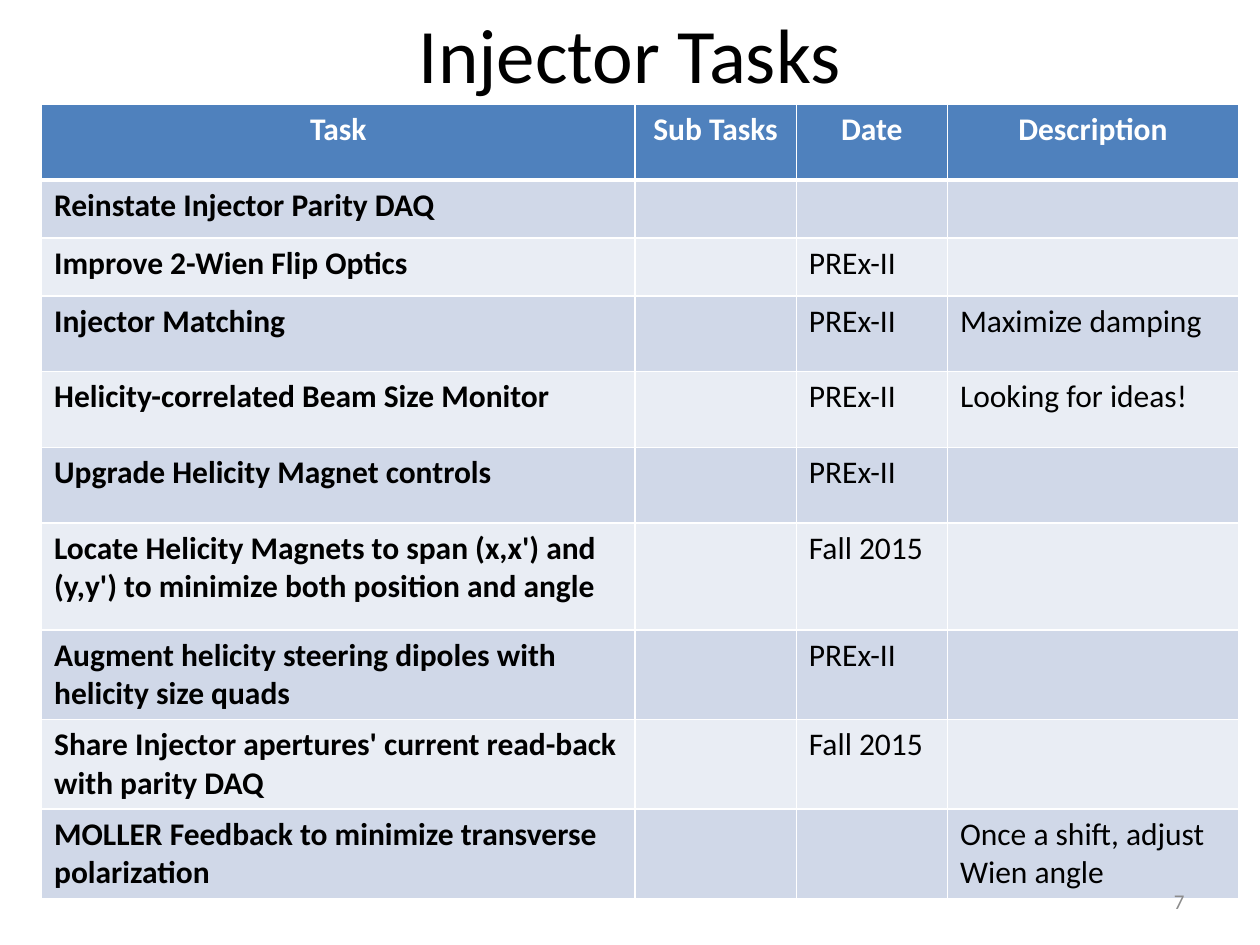
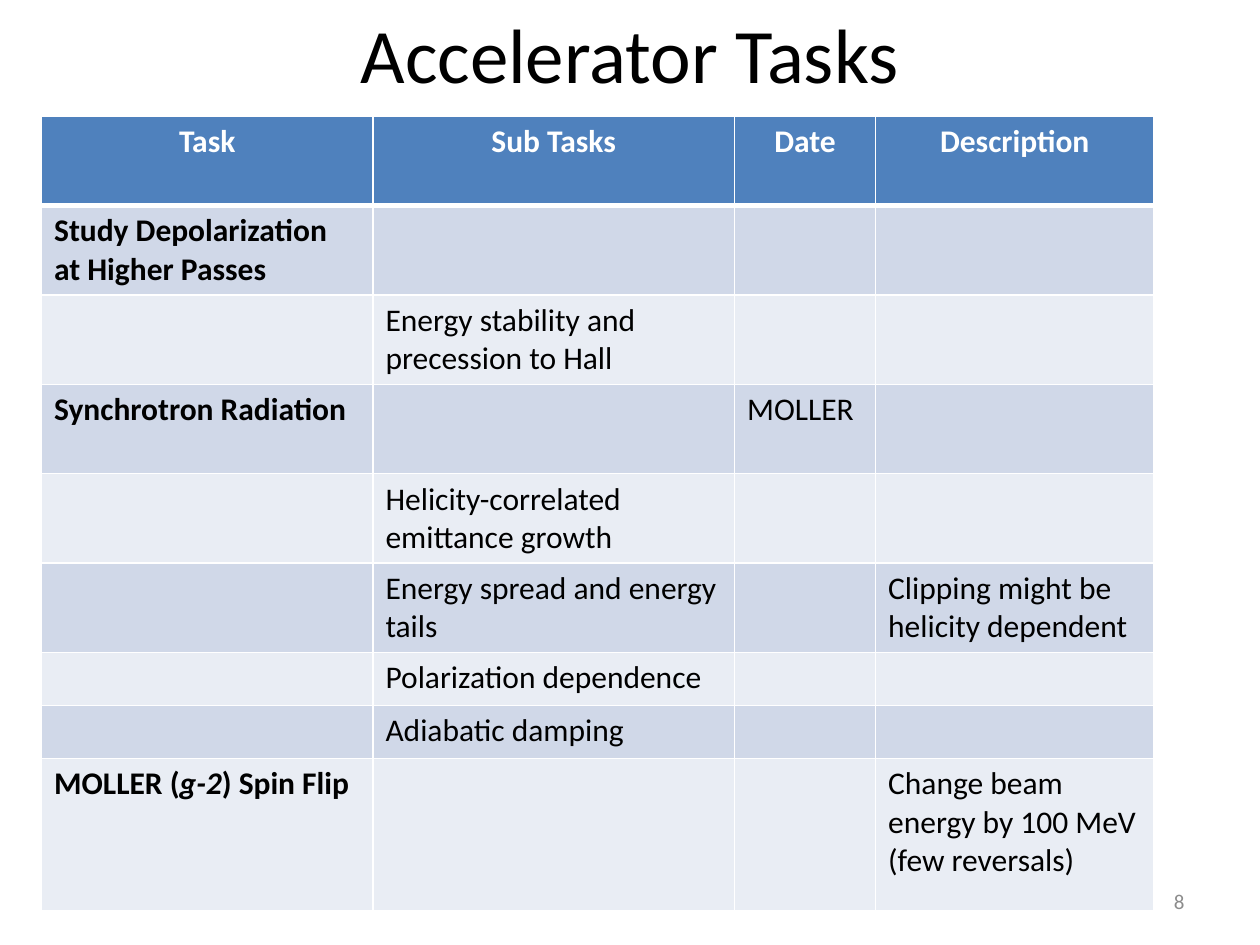
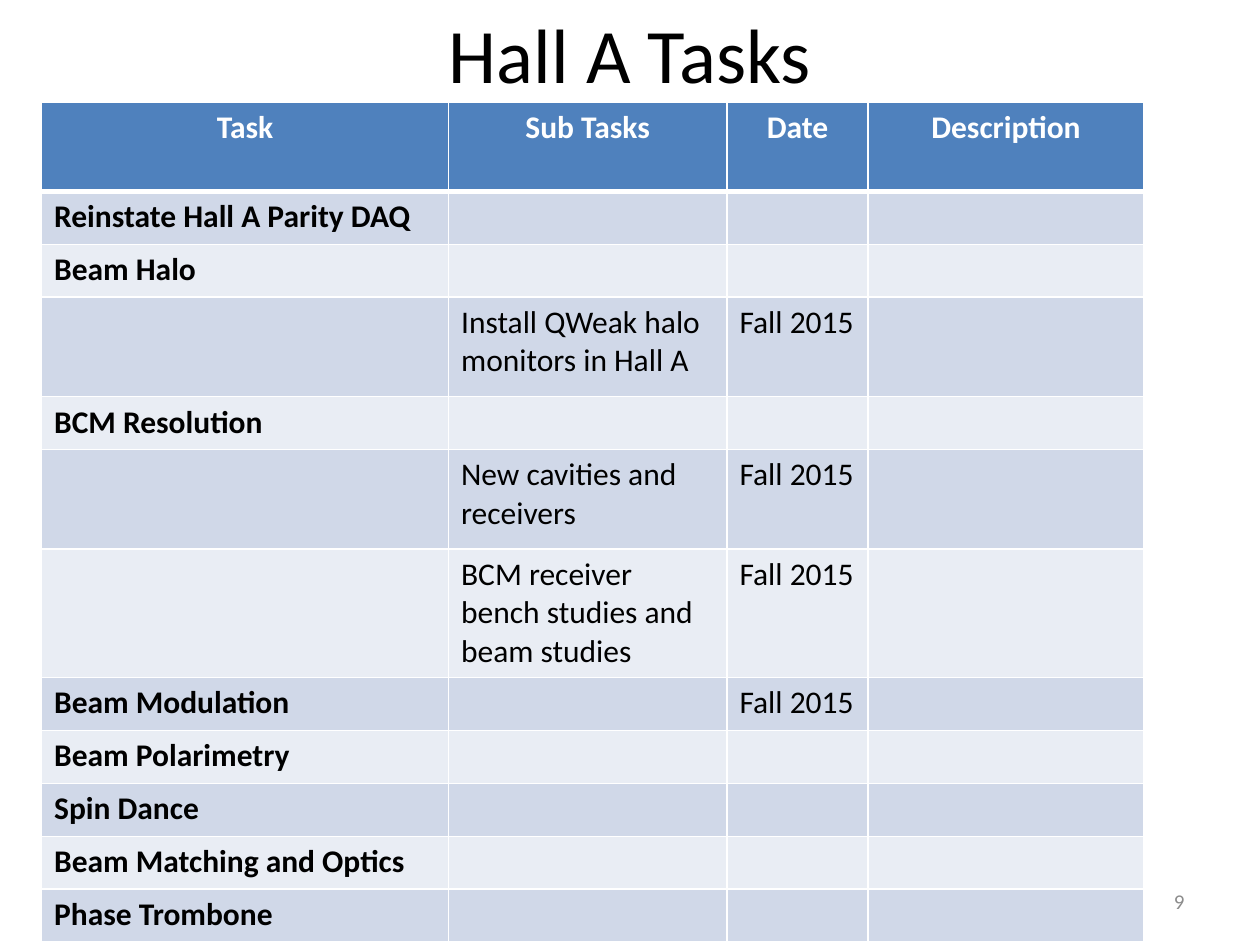
from lxml import etree
from pptx import Presentation
from pptx.dml.color import RGBColor
from pptx.enum.text import MSO_ANCHOR as Anchor, PP_ALIGN as Align
from pptx.oxml.ns import qn
from pptx.util import Inches, Pt

FONT = "Calibri"
BLACK, WHITE, GREY = "000000", "FFFFFF", "8C8C8C"
HEADER_FILL = "4F81BD"
BAND_FILLS = ("D0D8E8", "E9EDF4")
HEADINGS = ("Task", "Sub Tasks", "Date", "Description")
TABLE_LEFT = 0.33

# Each row: height, task, sub task, date, description; *...* marks italics
TASK_SLIDES = [
    {
        "title": "Injector Tasks", "number": 7, "top": 0.83,
        "columns": (4.71, 1.28, 1.2, 2.31), "header_height": 0.6,
        "rows": [
            (0.46, "Reinstate Injector Parity DAQ", "", "", ""),
            (0.46, "Improve 2-Wien Flip Optics", "", "PREx-II", ""),
            (0.6, "Injector Matching", "", "PREx-II", "Maximize damping"),
            (0.6, "Helicity-correlated Beam Size Monitor", "", "PREx-II", "Looking for ideas!"),
            (0.6, "Upgrade Helicity Magnet controls", "", "PREx-II", ""),
            (0.85, "Locate Helicity Magnets to span (x,x') and (y,y') to minimize "
                   "both position and angle", "", "Fall 2015", ""),
            (0.71, "Augment helicity steering dipoles with helicity size quads",
             "", "PREx-II", ""),
            (0.71, "Share Injector apertures' current read-back with parity DAQ",
             "", "Fall 2015", ""),
            (0.71, "MOLLER Feedback to minimize transverse polarization",
             "", "", "Once a shift, adjust Wien angle"),
        ],
    },
    {
        "title": "Accelerator Tasks", "number": 8, "top": 0.92,
        "columns": (2.63, 2.87, 1.12, 2.21), "header_height": 0.71,
        "rows": [
            (0.71, "Study Depolarization at Higher Passes", "", "", ""),
            (0.71, "", "Energy stability and precession to Hall", "", ""),
            (0.71, "Synchrotron Radiation", "", "MOLLER", ""),
            (0.71, "", "Helicity-correlated emittance growth", "", ""),
            (0.71, "", "Energy spread and energy tails", "",
             "Clipping might be helicity dependent"),
            (0.42, "", "Polarization dependence", "", ""),
            (0.42, "", "Adiabatic damping", "", ""),
            (1.21, "MOLLER (*g-2*) Spin Flip", "", "",
             "Change beam energy by 100 MeV\n(few reversals)"),
        ],
    },
    {
        "title": "Hall A Tasks", "number": 9, "top": 0.81,
        "columns": (3.23, 2.21, 1.12, 2.19), "header_height": 0.71,
        "rows": [
            (0.42, "Reinstate Hall A Parity DAQ", "", "", ""),
            (0.42, "Beam Halo", "", "", ""),
            (0.79, "", "Install QWeak halo monitors in Hall A", "Fall 2015", ""),
            (0.42, "BCM Resolution", "", "", ""),
            (0.79, "", "New cavities and receivers", "Fall 2015", ""),
            (1.02, "", "BCM receiver bench studies and beam studies", "Fall 2015", ""),
            (0.42, "Beam Modulation", "", "Fall 2015", ""),
            (0.42, "Beam Polarimetry", "", "", ""),
            (0.42, "Spin Dance", "", "", ""),
            (0.42, "Beam Matching and Optics", "", "", ""),
            (0.42, "Phase Trombone", "", "", ""),
        ],
    },
]


def rgb(color):
    return RGBColor.from_string(color)


def write(frame, text, size=18, color=BLACK, bold=False, align=Align.LEFT):
    """Fill a text frame: one paragraph per line, italics between asterisks."""
    frame.word_wrap = True
    for i, line in enumerate(text.split("\n")):
        paragraph = frame.add_paragraph() if i else frame.paragraphs[0]
        paragraph.alignment = align
        paragraph.font.size = Pt(size)
        for j, part in enumerate(line.split("*")):
            if not part:
                continue
            run = paragraph.add_run()
            run.text = part
            run.font.name = FONT
            run.font.size = Pt(size)
            run.font.bold = bold
            run.font.italic = j % 2 == 1
            run.font.color.rgb = rgb(color)


def add_text(slide, box, text, **style):
    frame = slide.shapes.add_textbox(*map(Inches, box)).text_frame
    frame.vertical_anchor = Anchor.MIDDLE
    write(frame, text, **style)


def set_borders(cell, top=1, bottom=1):
    """White cell borders; the line elements go ahead of the fill."""
    properties = cell._tc.get_or_add_tcPr()
    widths = {"a:lnL": 1, "a:lnR": 1, "a:lnT": top, "a:lnB": bottom}
    for i, (tag, width) in enumerate(widths.items()):
        line = etree.Element(qn(tag), w=str(Pt(width)))
        solid = etree.SubElement(line, qn("a:solidFill"))
        etree.SubElement(solid, qn("a:srgbClr"), val=WHITE)
        properties.insert(i, line)


def add_task_table(slide, content):
    columns = content["columns"]
    rows = [(content["header_height"], *HEADINGS)] + content["rows"]
    height = sum(row[0] for row in rows)
    table = slide.shapes.add_table(
        len(rows), len(columns), Inches(TABLE_LEFT), Inches(content["top"]),
        Inches(sum(columns)), Inches(height)).table
    for column, width in zip(table.columns, columns):
        column.width = Inches(width)

    for r, (row_height, *entries) in enumerate(rows):
        table.rows[r].height = Inches(row_height)
        header = r == 0
        for c, entry in enumerate(entries):
            cell = table.cell(r, c)
            cell.fill.solid()
            cell.fill.fore_color.rgb = rgb(HEADER_FILL if header else BAND_FILLS[(r - 1) % 2])
            set_borders(cell, top=3 if r == 1 else 1, bottom=3 if header else 1)
            write(cell.text_frame, entry, bold=header or c == 0,
                  color=WHITE if header else BLACK,
                  align=Align.CENTER if header else Align.LEFT)


def main():
    deck = Presentation()
    deck.slide_width, deck.slide_height = Inches(10), Inches(7.5)
    for content in TASK_SLIDES:
        slide = deck.slides.add_slide(deck.slide_layouts[6])
        add_text(slide, (0.5, 0, 9, 0.83), content["title"], size=44, align=Align.CENTER)
        add_task_table(slide, content)
        # Slide number
        add_text(slide, (7.17, 6.95, 2.33, 0.4), str(content["number"]),
                 size=12, color=GREY, align=Align.RIGHT)
    deck.save("out.pptx")


if __name__ == "__main__":
    main()
